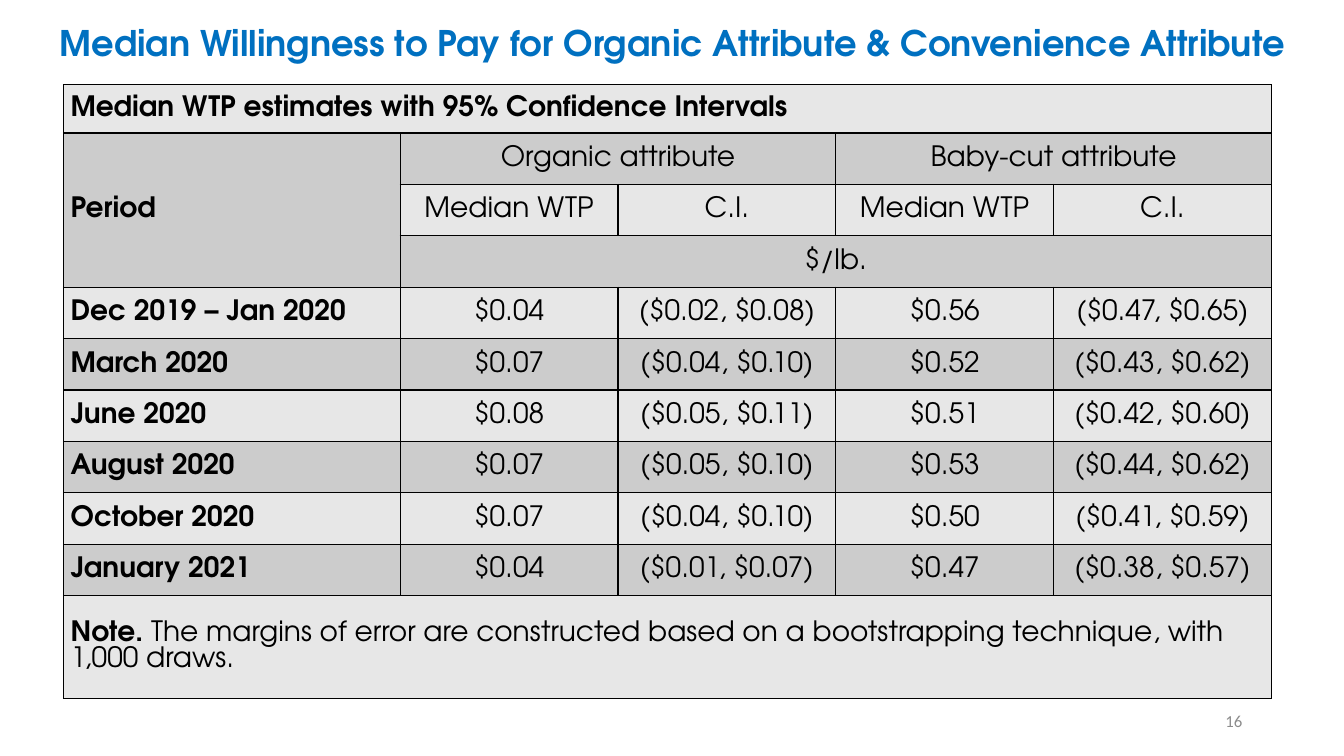
import pptx
import pptx.util
import pptx.dml.color
import pptx.enum.text
import pptx.oxml
import pptx.oxml.ns

Inches, Pt = pptx.util.Inches, pptx.util.Pt
ALIGN = pptx.enum.text.PP_ALIGN
MIDDLE = pptx.enum.text.MSO_ANCHOR.MIDDLE

# Content
TITLE = "Median Willingness to Pay for Organic Attribute & Convenience Attribute"
PAGE_NUMBER = "16"
NOTE = ("Note. ", "The margins of error are constructed based on a "
                  "bootstrapping technique, with 1,000 draws.")
ROWS = [
    ("Median WTP estimates with 95% Confidence Intervals", "", "", "", ""),
    ("Period", "Organic attribute", "", "Baby-cut attribute", ""),
    ("", "Median WTP", "C.I.", "Median WTP", "C.I."),
    ("", "$/lb.", "", "", ""),
    ("Dec 2019 – Jan 2020", "$0.04", "($0.02, $0.08)", "$0.56", "($0.47, $0.65)"),
    ("March 2020", "$0.07", "($0.04, $0.10)", "$0.52", "($0.43, $0.62)"),
    ("June 2020", "$0.08", "($0.05, $0.11)", "$0.51", "($0.42, $0.60)"),
    ("August 2020", "$0.07", "($0.05, $0.10)", "$0.53", "($0.44, $0.62)"),
    ("October 2020", "$0.07", "($0.04, $0.10)", "$0.50", "($0.41, $0.59)"),
    ("January 2021", "$0.04", "($0.01, $0.07)", "$0.47", "($0.38, $0.57)"),
    ("", "", "", "", ""),
]
# First and last (row, column) of each merged block
MERGES = [((0, 0), (0, 4)), ((1, 0), (3, 0)), ((1, 1), (1, 2)),
          ((1, 3), (1, 4)), ((3, 1), (3, 4)), ((10, 0), (10, 4))]

# Style
FONT, NUMBER_FONT = "TeX Gyre Adventor", "Calibri"
COLOURS = {"title": "0070C0", "number": "8C8C8C", "text": "000000",
           "border": "000000", "light": "E7E7E7", "dark": "CCCCCC"}
COLUMN_WIDTHS = [3.34] + [2.16] * 4
ROW_HEIGHTS = [0.48] + [0.51] * 9 + [1.02]


def colour(name):
    return pptx.dml.color.RGBColor.from_string(COLOURS[name])


def style(span, size, name, bold=False, font=FONT):
    span.font.name, span.font.size, span.font.bold = font, Pt(size), bold
    span.font.color.rgb = colour(name)


def add_line(page, place, text, align, *look):
    box = page.shapes.add_textbox(*map(Inches, place))
    frame = box.text_frame
    frame.word_wrap, frame.vertical_anchor = True, MIDDLE
    frame.text = text
    para = frame.paragraphs[0]
    para.alignment = align
    style(para.runs[0], *look)
    return para


def add_borders(cell):
    properties = cell._tc.get_or_add_tcPr()
    for position, side in enumerate(("lnL", "lnR", "lnT", "lnB")):
        properties.insert(position, pptx.oxml.parse_xml(
            f'<a:{side} {pptx.oxml.ns.nsdecls("a")} w="{Pt(1)}"><a:solidFill>'
            f'<a:srgbClr val="{COLOURS["border"]}"/></a:solidFill></a:{side}>'))


deck = pptx.Presentation()
deck.slide_width, deck.slide_height = Inches(13.33), Inches(7.5)
page = deck.slides.add_slide(deck.slide_layouts[6])

# Title and page number
title = add_line(page, (0.28, 0.19, 12.78, 0.51), TITLE, ALIGN.CENTER,
                 25.2, "title", True)
title.line_spacing = 0.9
add_line(page, (9.42, 6.95, 3, 0.4), PAGE_NUMBER, ALIGN.RIGHT,
         12, "number", False, NUMBER_FONT)

# Table grid
table = page.shapes.add_table(
    len(ROWS), len(COLUMN_WIDTHS), Inches(0.63), Inches(0.84),
    Inches(sum(COLUMN_WIDTHS)), Inches(sum(ROW_HEIGHTS))).table
for column, width in zip(table.columns, COLUMN_WIDTHS):
    column.width = Inches(width)
for row, height in zip(table.rows, ROW_HEIGHTS):
    row.height = Inches(height)
for (top, left), (bottom, right) in MERGES:
    table.cell(top, left).merge(table.cell(bottom, right))

# Table cells: banded rows, bold first column
for r, texts in enumerate(ROWS):
    for c, text in enumerate(texts):
        cell = table.cell(r, c)
        cell.fill.solid()
        cell.fill.fore_color.rgb = colour("dark" if r % 2 else "light")
        add_borders(cell)
        cell.vertical_anchor = MIDDLE
        cell.margin_left = cell.margin_right = Inches(0.07)
        cell.margin_top = cell.margin_bottom = 0
        para = cell.text_frame.paragraphs[0]
        para.alignment = ALIGN.CENTER if c else ALIGN.LEFT
        if text:
            span = para.add_run()
            span.text = text
            style(span, 20, "text", c == 0)

# Note in the last row
note_para = table.cell(len(ROWS) - 1, 0).text_frame.paragraphs[0]
for text, bold in zip(NOTE, (True, False)):
    span = note_para.add_run()
    span.text = text
    style(span, 20, "text", bold)

deck.save("out.pptx")
